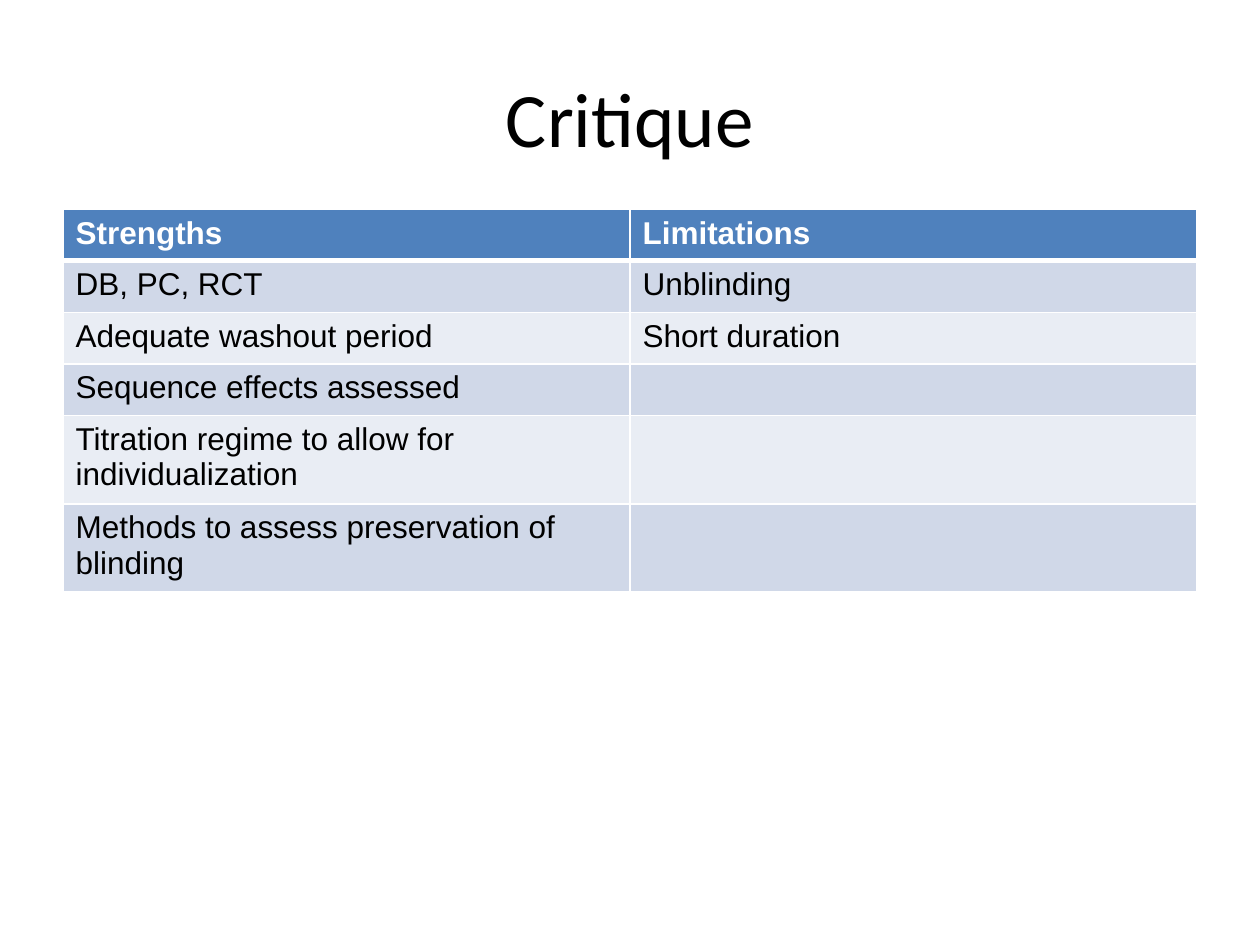
from lxml.etree import SubElement as Sub
from pptx import Presentation
from pptx.dml.color import RGBColor
from pptx.enum.text import MSO_ANCHOR as Anchor, PP_ALIGN as Align
from pptx.oxml.ns import qn
from pptx.util import Inches, Pt

WIDE, HIGH = 10, 7.5
ROWS = [
    ("Strengths", "Limitations"),
    ("DB, PC, RCT", "Unblinding"),
    ("Adequate washout period", "Short duration"),
    ("Sequence effects assessed", ""),
    ("Titration regime to allow for individualization", ""),
    ("Methods to assess preservation of blinding", ""),
]
TALL = [0.41] * 4 + [0.66] * 2


def tint(code):
    return RGBColor.from_string(code)


class Deck:
    """Hold the style and the current slide."""

    ink, white, head = "000000", "FFFFFF", "4F81BD"
    bands = ("E9EDF4", "D0D8E8")

    def __init__(self):
        self.prs = Presentation()
        self.prs.slide_width, self.prs.slide_height = Inches(WIDE), Inches(HIGH)
        self.slide = self.prs.slides.add_slide(self.prs.slide_layouts[6])

    def place(self, x, y, w, h):
        return [Inches(WIDE * x), Inches(HIGH * y), Inches(WIDE * w), Inches(HIGH * h)]

    def style(self, para, face, size, color, bold=False):
        font = para.font
        for run in para.runs:
            font = run.font
        font.name, font.size, font.bold = face, Pt(size), bold
        font.color.rgb = tint(color)

    def title(self, text, *area):
        frame = self.slide.shapes.add_textbox(*self.place(*area)).text_frame
        frame.word_wrap = True
        frame.vertical_anchor = Anchor.MIDDLE
        frame.text = text
        para = frame.paragraphs[0]
        para.alignment = Align.CENTER
        self.style(para, "Calibri", 44, self.ink)

    def edge(self, cell, base):
        props = cell._tc.get_or_add_tcPr()
        for side, width in zip("LRTB", (1, 1, 1, base)):
            line = Sub(props, qn(f"a:ln{side}"), w=str(Pt(width)))
            Sub(Sub(line, qn("a:solidFill")), qn("a:srgbClr"), val=self.white)

    def cell(self, cell, text, row):
        top = row == 0
        self.edge(cell, 3 if top else 1)
        cell.fill.solid()
        cell.fill.fore_color.rgb = tint(self.head if top else self.bands[row % 2])
        cell.text_frame.text = text
        color = self.white if top else self.ink
        self.style(cell.text_frame.paragraphs[0], "Arial", 18, color, top)

    def table(self, rows, tall, x, y, w):
        area = self.place(x, y, w, sum(tall) / HIGH)
        grid = self.slide.shapes.add_table(len(rows), len(rows[0]), *area).table
        for r, (row, high) in enumerate(zip(rows, tall)):
            grid.rows[r].height = Inches(high)
            for c, text in enumerate(row):
                self.cell(grid.cell(r, c), text, r)


def main():
    deck = Deck()
    deck.title("Critique", 0.05, 0.04, 0.9, 1.25 / HIGH)
    deck.table(ROWS, TALL, 0.05, 1.66 / HIGH, 0.9)
    deck.prs.save("out.pptx")


if __name__ == "__main__":
    main()
